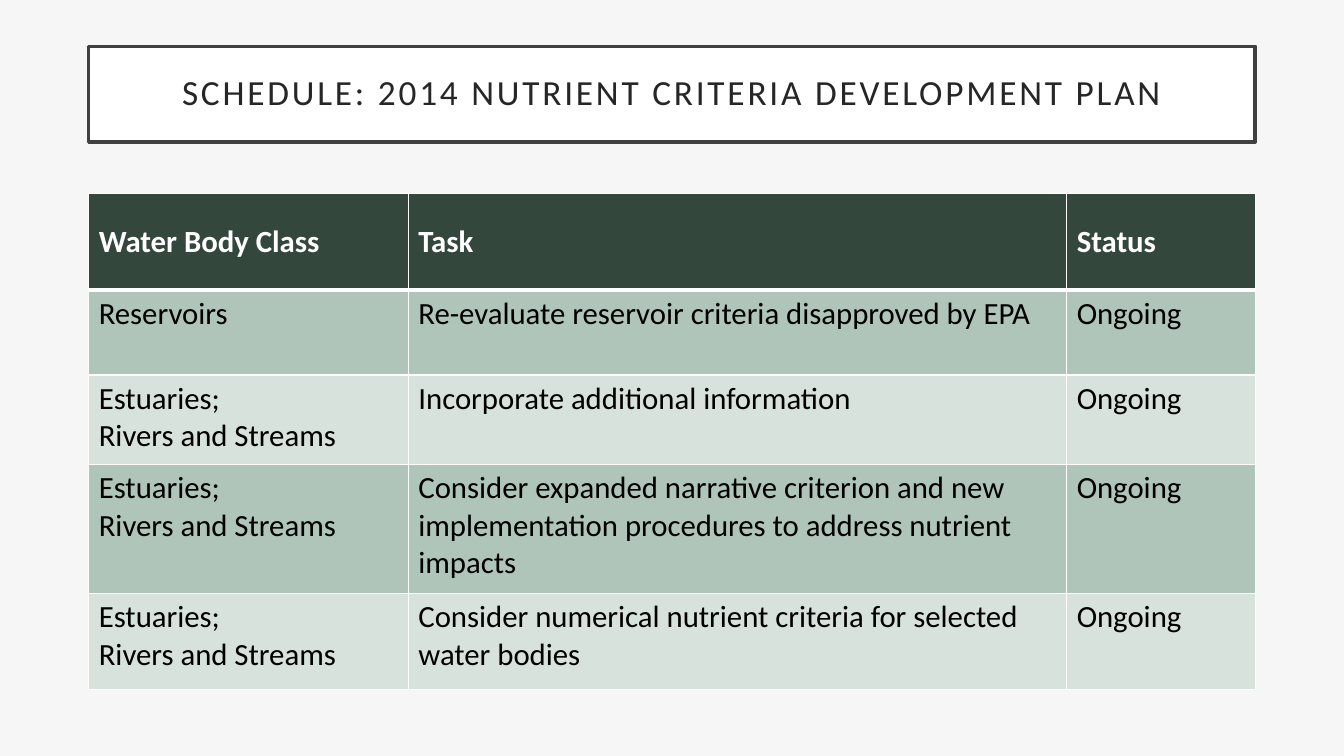
"""Build the nutrient criteria schedule slide."""
from lxml import etree
from pptx import Presentation
from pptx.dml.color import RGBColor
from pptx.enum.shapes import MSO_SHAPE
from pptx.enum.text import MSO_ANCHOR, PP_ALIGN
from pptx.oxml.ns import qn
from pptx.util import Inches, Pt

RECTANGLE = MSO_SHAPE.RECTANGLE
MIDDLE, TOP = MSO_ANCHOR.MIDDLE, MSO_ANCHOR.TOP
CENTER = PP_ALIGN.CENTER

TITLE = "SCHEDULE: 2014 NUTRIENT CRITERIA DEVELOPMENT PLAN"
FLOWING_WATERS = "Estuaries;\nRivers and Streams"
ROWS = [
    ("Water Body Class", "Task", "Status"),
    ("Reservoirs", "Re-evaluate reservoir criteria disapproved by EPA", "Ongoing"),
    (FLOWING_WATERS, "Incorporate additional information", "Ongoing"),
    (FLOWING_WATERS, "Consider expanded narrative criterion and new "
     "implementation procedures to address nutrient impacts", "Ongoing"),
    (FLOWING_WATERS, "Consider numerical nutrient criteria for selected "
     "water bodies", "Ongoing"),
]
COLUMN_WIDTHS = (3.17, 6.53, 1.87)
ROW_HEIGHTS = (0.96, 0.84, 0.89, 1.28, 0.95)
HEADER_FILL = "34473D"
BAND_FILLS = ("D7E2DC", "AFC5B9")
WHITE, BLACK = "FFFFFF", "000000"
FONT = "Calibri"
SLIDE_WIDTH, SLIDE_HEIGHT = 13.33, 7.5
CONTENT_WIDTH = sum(COLUMN_WIDTHS)
LEFT = (SLIDE_WIDTH - CONTENT_WIDTH) / 2
TITLE_TOP, TITLE_HEIGHT, TABLE_TOP = 0.46, 0.95, 1.92


def color(value):
    return RGBColor.from_string(value)


def style_font(paragraph, size, value, bold=False):
    paragraph.font.name = FONT
    paragraph.font.size = Pt(size)
    paragraph.font.bold = bold
    paragraph.font.color.rgb = color(value)


def add_borders(cell, top, bottom):
    properties = cell._tc.get_or_add_tcPr()
    sides = (("a:lnL", 1), ("a:lnR", 1), ("a:lnT", top), ("a:lnB", bottom))
    for side, width in sides:
        line = etree.SubElement(properties, qn(side), w=str(Pt(width)))
        fill = etree.SubElement(line, qn("a:solidFill"))
        etree.SubElement(fill, qn("a:srgbClr"), val=WHITE)


def add_title(slide):
    shape = slide.shapes.add_shape(
        RECTANGLE, Inches(LEFT), Inches(TITLE_TOP),
        Inches(CONTENT_WIDTH), Inches(TITLE_HEIGHT))
    shape.shadow.inherit = False
    shape.fill.solid()
    shape.fill.fore_color.rgb = color(WHITE)
    shape.line.color.rgb = color("404040")
    shape.line.width = Pt(2.5)
    frame = shape.text_frame
    frame.word_wrap = True
    frame.vertical_anchor = MIDDLE
    frame.margin_left = frame.margin_right = Inches(0.2)
    frame.margin_top = frame.margin_bottom = Inches(0.2)
    frame.text = TITLE
    paragraph = frame.paragraphs[0]
    paragraph.alignment = CENTER
    paragraph.line_spacing = 0.9
    style_font(paragraph, 25.2, "262626")
    paragraph.runs[0].font._element.set("spc", "200")


def add_schedule(slide):
    table = slide.shapes.add_table(
        len(ROWS), len(COLUMN_WIDTHS), Inches(LEFT), Inches(TABLE_TOP),
        Inches(CONTENT_WIDTH), Inches(sum(ROW_HEIGHTS))).table
    for column, width in zip(table.columns, COLUMN_WIDTHS):
        column.width = Inches(width)
    for index, (row, height, texts) in enumerate(zip(table.rows, ROW_HEIGHTS, ROWS)):
        row.height = Inches(height)
        header = index == 0
        for cell, text in zip(row.cells, texts):
            cell.text = text
            cell.vertical_anchor = MIDDLE if header else TOP
            add_borders(cell, 3 if index == 1 else 1, 3 if header else 1)
            cell.fill.solid()
            cell.fill.fore_color.rgb = color(HEADER_FILL if header else BAND_FILLS[index % 2])
            for paragraph in cell.text_frame.paragraphs:
                style_font(paragraph, 22, WHITE if header else BLACK, header)


def main():
    presentation = Presentation()
    presentation.slide_width = Inches(SLIDE_WIDTH)
    presentation.slide_height = Inches(SLIDE_HEIGHT)
    slide = presentation.slides.add_slide(presentation.slide_layouts[6])
    slide.background.fill.solid()
    slide.background.fill.fore_color.rgb = color("F6F6F6")
    add_title(slide)
    add_schedule(slide)
    presentation.save("out.pptx")


if __name__ == "__main__":
    main()
